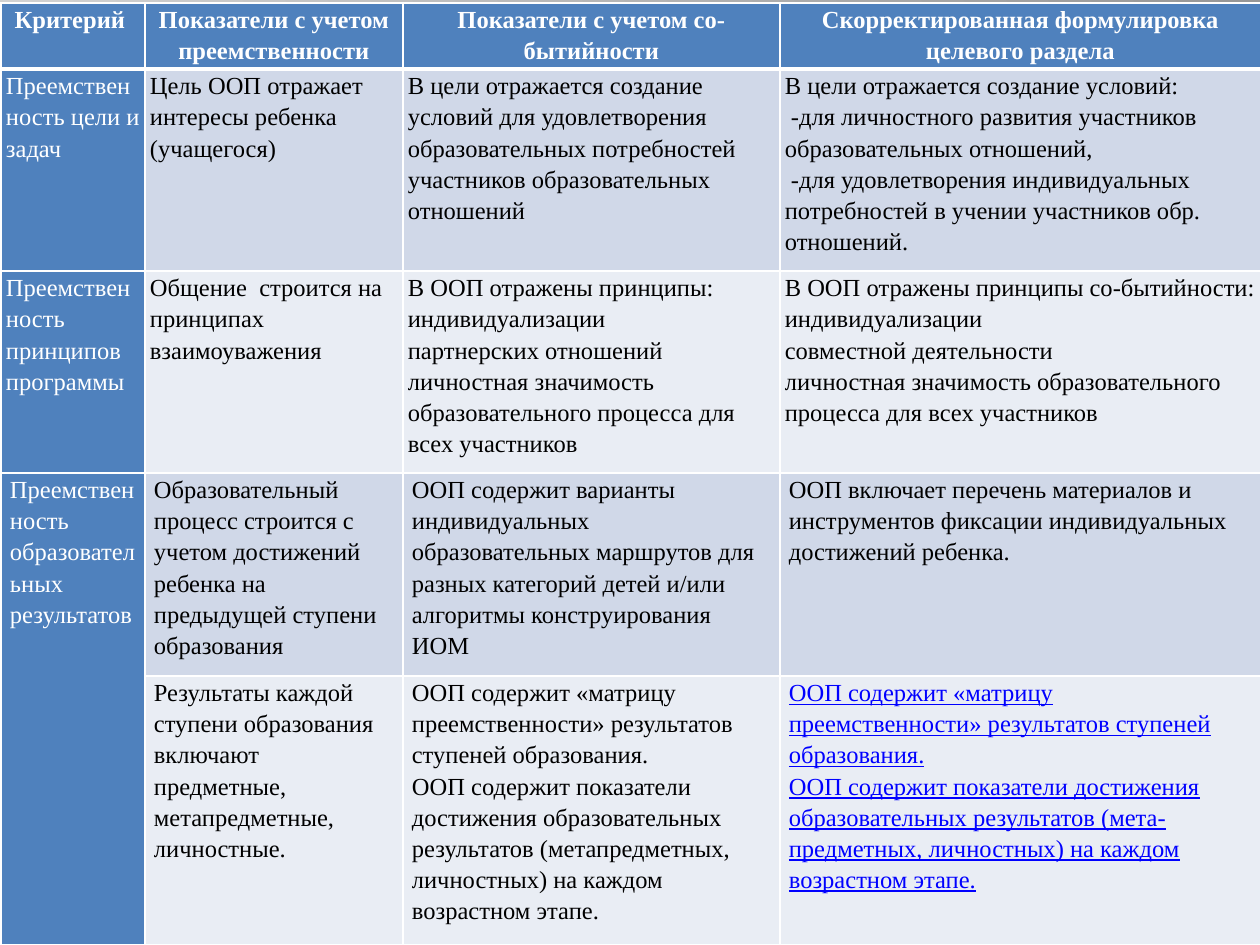
from lxml import etree
from pptx import Presentation
from pptx import util as u
from pptx.dml.color import RGBColor
from pptx.enum import text
from pptx.oxml import parse_xml
from pptx.oxml.ns import nsdecls, qn

SCALE = 914400 / 126  # EMU per px


def px(length):
    return u.Emu(round(length * SCALE))


def color(hex_string):
    return RGBColor.from_string(hex_string)


BLUE, WHITE, BLACK, LINK = "4F81BD", "FFFFFF", "000000", "0000FF"
BANDS = ["D0D8E8", "E9EDF4"]
COLUMN_WIDTHS = [144, 258, 377, 481]
ROW_HEIGHTS = [66, 202, 202, 203, 269]

# One list per row; line ends inside a cell separate paragraphs
ROWS = [
    ["Критерий ",
     "Показатели с учетом преемственности",
     "Показатели с учетом со-бытийности",
     "Скорректированная формулировка целевого раздела"],
    ["Преемственность цели и задач",
     "Цель ООП отражает интересы ребенка (учащегося)",
     "В цели отражается создание условий для удовлетворения образовательных "
     "потребностей участников образовательных отношений",
     "В цели отражается создание условий:\n"
     " -для личностного развития участников образовательных отношений,\n"
     " -для удовлетворения индивидуальных потребностей в учении участников обр. отношений."],
    ["Преемственность принципов программы",
     "Общение  строится на принципах взаимоуважения",
     "В ООП отражены принципы:\nиндивидуализации\nпартнерских отношений\n"
     "личностная значимость образовательного процесса для всех участников",
     "В ООП отражены принципы со-бытийности:\nиндивидуализации\nсовместной деятельности\n"
     "личностная значимость образовательного процесса для всех участников"],
    ["Преемственность образовательных результатов",
     "Образовательный процесс строится с учетом достижений ребенка на предыдущей "
     "ступени образования",
     "ООП содержит варианты индивидуальных образовательных маршрутов для разных "
     "категорий детей и/или алгоритмы конструирования ИОМ",
     "ООП включает перечень материалов и инструментов фиксации индивидуальных "
     "достижений ребенка."],
    [None,
     "Результаты каждой ступени образования включают предметные, метапредметные, личностные.",
     "ООП содержит «матрицу преемственности» результатов ступеней образования.\n"
     "ООП содержит показатели достижения образовательных результатов "
     "(метапредметных, личностных) на каждом возрастном этапе.",
     "ООП содержит «матрицу преемственности» результатов ступеней образования.\n"
     "ООП содержит показатели достижения образовательных результатов "
     "(мета-предметных, личностных) на каждом возрастном этапе."],
]

deck = Presentation()
deck.slide_width, deck.slide_height = px(1260), px(945)
page = deck.slides.add_slide(deck.slide_layouts[6])

# Background: radial gradient from the lower left corner
background = page.background.fill
background.gradient()
for stop, shade in zip(background.gradient_stops, [WHITE, "979797"]):
    stop.color.rgb = color(shade)
background.gradient_stops[0].position = 0
background.gradient_stops[1].position = 1
gradient = page.background._cSld.find(".//" + qn("a:gradFill"))
gradient.replace(gradient.find(qn("a:lin")), parse_xml(
    f'<a:path {nsdecls("a")} path="circle">'
    '<a:fillToRect t="100000" r="100000"/></a:path>'))

# Table grid
frame = page.shapes.add_table(len(ROWS), len(COLUMN_WIDTHS), px(1), px(3),
                              px(sum(COLUMN_WIDTHS)), px(sum(ROW_HEIGHTS)))
table = frame.table
for column, width in zip(table.columns, COLUMN_WIDTHS):
    column.width = px(width)
for row, height in zip(table.rows, ROW_HEIGHTS):
    row.height = px(height)
table.cell(3, 0).merge(table.cell(4, 0))

# Cells
for i, row_texts in enumerate(ROWS):
    for j, content in enumerate(row_texts):
        cell = table.cell(i, j)
        header = i == 0
        on_blue = header or j == 0
        link = i == 4 and j == 3

        # White borders, thicker under the header
        properties = cell._tc.get_or_add_tcPr()
        for side in ["lnL", "lnR", "lnT", "lnB"]:
            thick = (header and side == "lnB") or (i == 1 and side == "lnT")
            line = etree.SubElement(properties, qn(f"a:{side}"),
                                    w=str(u.Pt(3 if thick else 1)))
            fill = etree.SubElement(line, qn("a:solidFill"))
            etree.SubElement(fill, qn("a:srgbClr"), val=WHITE)
        cell.fill.solid()
        cell.fill.fore_color.rgb = color(BLUE if on_blue else BANDS[(i - 1) % 2])

        cell.margin_left = cell.margin_right = px(5 if i < 3 else 9)
        cell.margin_top = cell.margin_bottom = 0
        if content is None:
            continue

        for k, words in enumerate(content.split("\n")):
            body = cell.text_frame
            para = body.add_paragraph() if k else body.paragraphs[0]
            para.alignment = text.PP_ALIGN.CENTER if header else text.PP_ALIGN.LEFT
            para.line_spacing = 1.15
            span = para.add_run()
            span.text = words
            span.font.name = "Times New Roman"
            span.font.size = u.Pt(14)
            span.font.bold = header
            span.font.underline = link
            span.font.color.rgb = color(WHITE if on_blue else LINK if link else BLACK)

deck.save("out.pptx")
